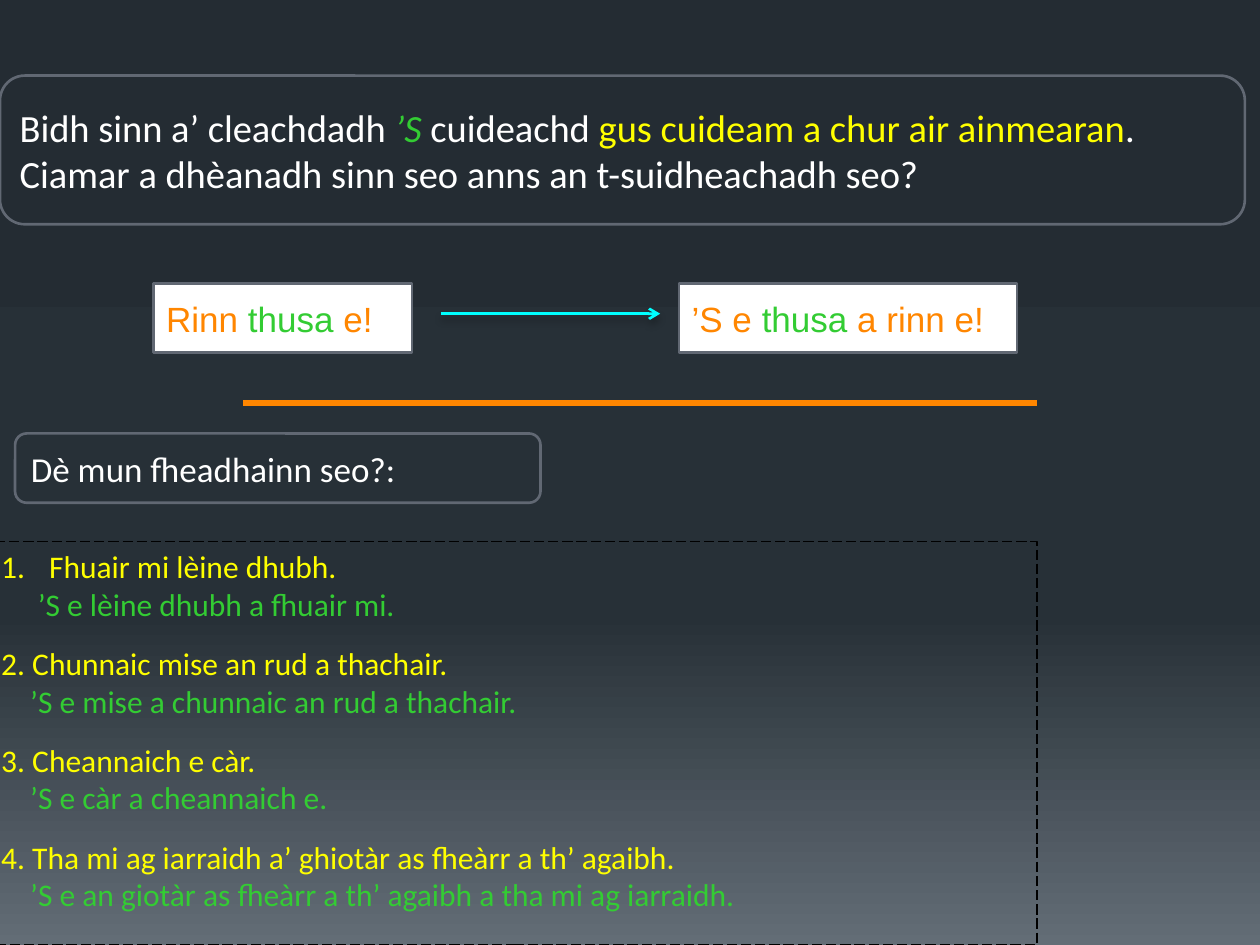
import lxml.etree
import pptx
import pptx.dml.color
import pptx.enum.dml
import pptx.enum.shapes
import pptx.enum.text
import pptx.oxml
import pptx.oxml.ns
import pptx.util

Inches = pptx.util.Inches
Pt = pptx.util.Pt
SHAPE = pptx.enum.shapes.MSO_SHAPE
ALIGN = pptx.enum.text.PP_ALIGN
ANCHOR = pptx.enum.text.MSO_ANCHOR
qn = pptx.oxml.ns.qn

COLORS = {
    "white": "FFFFFF", "black": "000000", "yellow": "FFFF00",
    "green": "33CC33", "orange": "FF8600", "cyan": "00FFFF",
    "border": "616873",
}
BACKGROUND = [(0, "242C33"), (65, "273037"), (100, "636D76")]

INTRO = [
    [("Bidh sinn a’ cleachdadh ", "white"), ("’S ", "green", True),
     ("cuideachd ", "white"),
     ("gus cuideam a chur air ainmearan", "yellow"), (".", "white")],
    [("Ciamar a dhèanadh sinn seo anns an t-suidheachadh seo?", "white")],
]
PLAIN = [[("Rinn ", "orange"), ("thusa", "green"), (" e!", "orange")]]
EMPHATIC = [[("’S e ", "orange"), ("thusa", "green"), (" a rinn e!", "orange")]]
QUESTION = [[("Dè mun fheadhainn seo?:", "white")]]
EXERCISES = [
    ("Fhuair mi lèine dhubh.", "’S e lèine dhubh a fhuair mi."),
    ("2. Chunnaic mise an rud a thachair.",
     "’S e mise a chunnaic an rud a thachair."),
    ("3. Cheannaich e càr.", "’S e càr a cheannaich e."),
    ("4. Tha mi ag iarraidh a’ ghiotàr as fheàrr a th’ agaibh.",
     "’S e an giotàr as fheàrr a th’ agaibh a tha mi ag iarraidh."),
]


def rgb(name):
    return pptx.dml.color.RGBColor.from_string(COLORS[name])


def set_all(obj, values):
    for name, value in values.items():
        setattr(obj, name, value)


def sub(parent, tag, **attrs):
    el = lxml.etree.SubElement(parent, qn(tag))
    for name, value in attrs.items():
        el.set(name, str(value))
    return el


def add_run(p, text, color, font, size, italic=False):
    r = p.add_run()
    r.text = text
    set_all(r.font, {"name": font, "size": Pt(size), "italic": italic})
    r.font.color.rgb = rgb(color)


def add_box(s, box, kind, line, width, fill=None):
    sp = s.shapes.add_shape(kind, *map(Inches, box))
    sp.shadow.inherit = False
    if fill:
        sp.fill.solid()
        sp.fill.fore_color.rgb = rgb(fill)
    else:
        sp.fill.background()
    sp.line.color.rgb = rgb(line)
    sp.line.width = Pt(width)
    sp.text_frame.word_wrap = True
    return sp


def add_line(s, box, color, width):
    x, y, w, h = box
    sp = s.shapes.add_connector(pptx.enum.shapes.MSO_CONNECTOR.STRAIGHT,
                                *map(Inches, (x, y, x + w, y + h)))
    sp.line.color.rgb = rgb(color)
    sp.line.width = Pt(width)
    effects = sub(sp._element.spPr, "a:effectLst")
    return sp, effects


def add_background(s):
    fill = s.background.fill
    fill.gradient()
    fill.gradient_angle = 270
    stops = s._element.find(".//" + qn("a:gsLst"))
    for stop in list(stops):
        stops.remove(stop)
    for pos, color in BACKGROUND:
        sub(sub(stops, "a:gs", pos=pos * 1000), "a:srgbClr", val=color)


def add_label(s, box, paragraphs, kind, font, size, fill=None):
    sp = add_box(s, box, kind, "border", 1.5, fill)
    tf = sp.text_frame
    tf.vertical_anchor = ANCHOR.MIDDLE
    for i, runs in enumerate(paragraphs):
        p = tf.add_paragraph() if i else tf.paragraphs[0]
        p.alignment = ALIGN.LEFT
        for text, color, *italic in runs:
            add_run(p, text, color, font, size, *italic)


def add_arrow(s, box):
    sp, effects = add_line(s, box, "cyan", 1.5)
    sub(sp.line._get_or_add_ln(), "a:tailEnd", type="arrow")
    shadow = sub(effects, "a:outerShdw", blurRad=Pt(4), dist=Pt(3),
                 dir=5400000, rotWithShape=0)
    sub(sub(shadow, "a:srgbClr", val=COLORS["black"]), "a:alpha", val=28000)


def add_example(s, box):
    x, y, w, h = box
    for left, width, text in [(x, 2.05, PLAIN), (x + w - 2.68, 2.68, EMPHATIC)]:
        add_label(s, (left, y, width, h), text, SHAPE.FLOWCHART_PROCESS,
                  "Arial", 20, "white")
    add_arrow(s, (x + 2.28, y + 0.24, 1.74, 0))


def add_exercises(s, box):
    sp = add_box(s, box, SHAPE.RECTANGLE, "black", 0.75)
    sp.line.dash_style = pptx.enum.dml.MSO_LINE.LONG_DASH
    tf = sp.text_frame
    tf.vertical_anchor = ANCHOR.TOP
    set_all(tf, {f"margin_{side}": Inches(0.04)
                 for side in ("left", "top", "right", "bottom")})
    for i, (sentence, answer) in enumerate(EXERCISES):
        p = tf.add_paragraph() if i else tf.paragraphs[0]
        set_all(p, {"alignment": ALIGN.JUSTIFY, "space_before": Pt(12.2 if i else 0)})
        add_run(p, sentence, "yellow", "Calibri", 18)
        if i == 0:
            pPr = p._p.get_or_add_pPr()
            pPr.set("marL", str(Inches(0.38)))
            pPr.set("indent", str(Inches(-0.38)))
            sub(pPr, "a:buFont", typeface="+mj-lt")
            sub(pPr, "a:buAutoNum", type="arabicPeriod")
        p = tf.add_paragraph()
        p.alignment = ALIGN.JUSTIFY
        p._p.get_or_add_pPr().set("marL", str(Inches(0.23 if i else 0.29)))
        add_run(p, answer, "green", "Calibri", 18)


def main():
    prs = pptx.Presentation()
    set_all(prs, {"slide_width": Inches(10), "slide_height": Inches(7.5)})
    s = prs.slides.add_slide(prs.slide_layouts[6])
    add_background(s)
    add_label(s, (0, 0.6, 9.88, 1.18), INTRO, SHAPE.ROUNDED_RECTANGLE,
              "Calibri", 22)
    add_example(s, (1.22, 2.25, 6.85, 0.55))
    add_line(s, (1.93, 3.2, 6.3, 0), "orange", 3.75)
    add_label(s, (0.12, 3.44, 4.17, 0.55), QUESTION, SHAPE.ROUNDED_RECTANGLE,
              "Calibri", 20)
    add_exercises(s, (-0.03, 4.3, 8.26, 3.2))
    prs.save("out.pptx")


if __name__ == "__main__":
    main()
